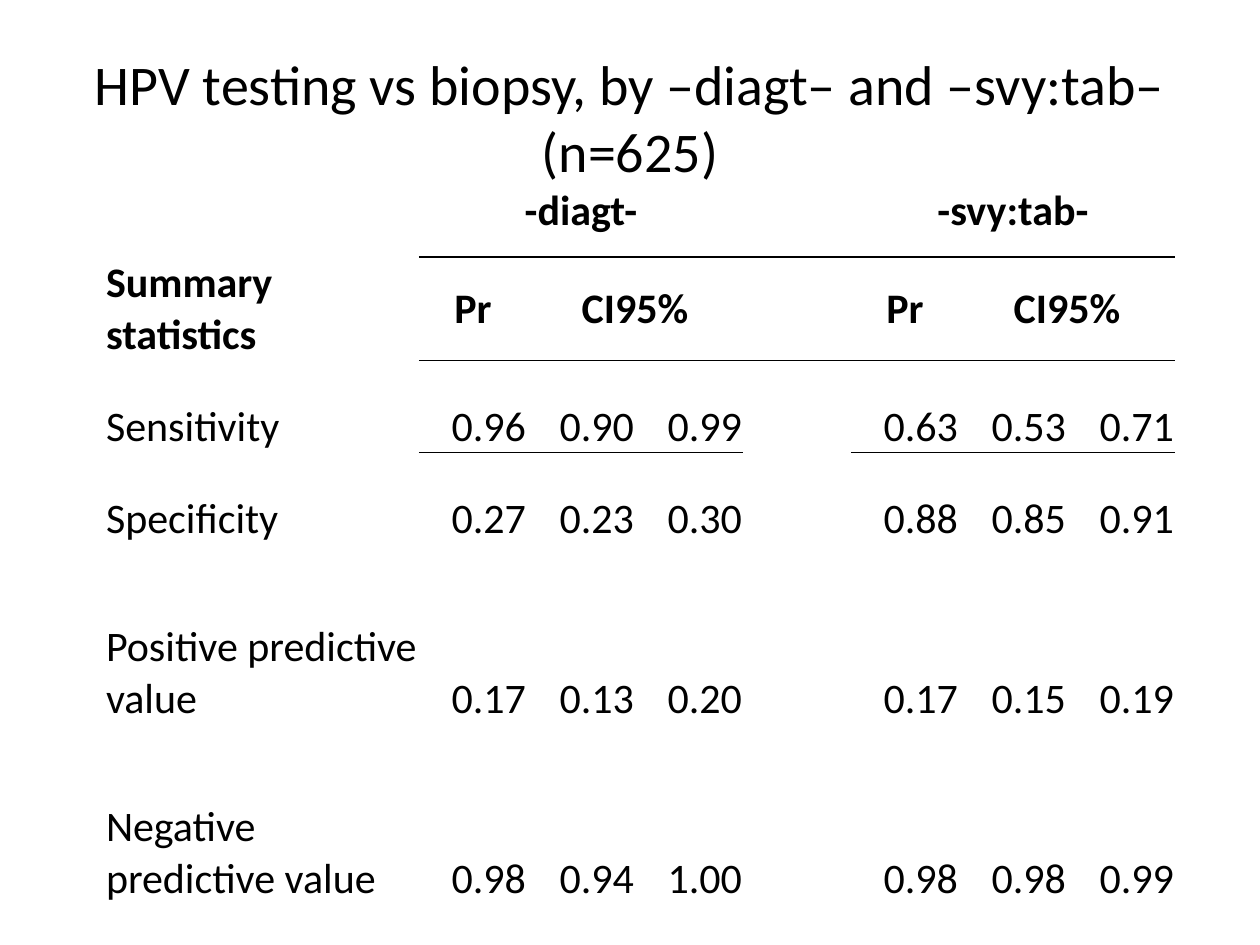
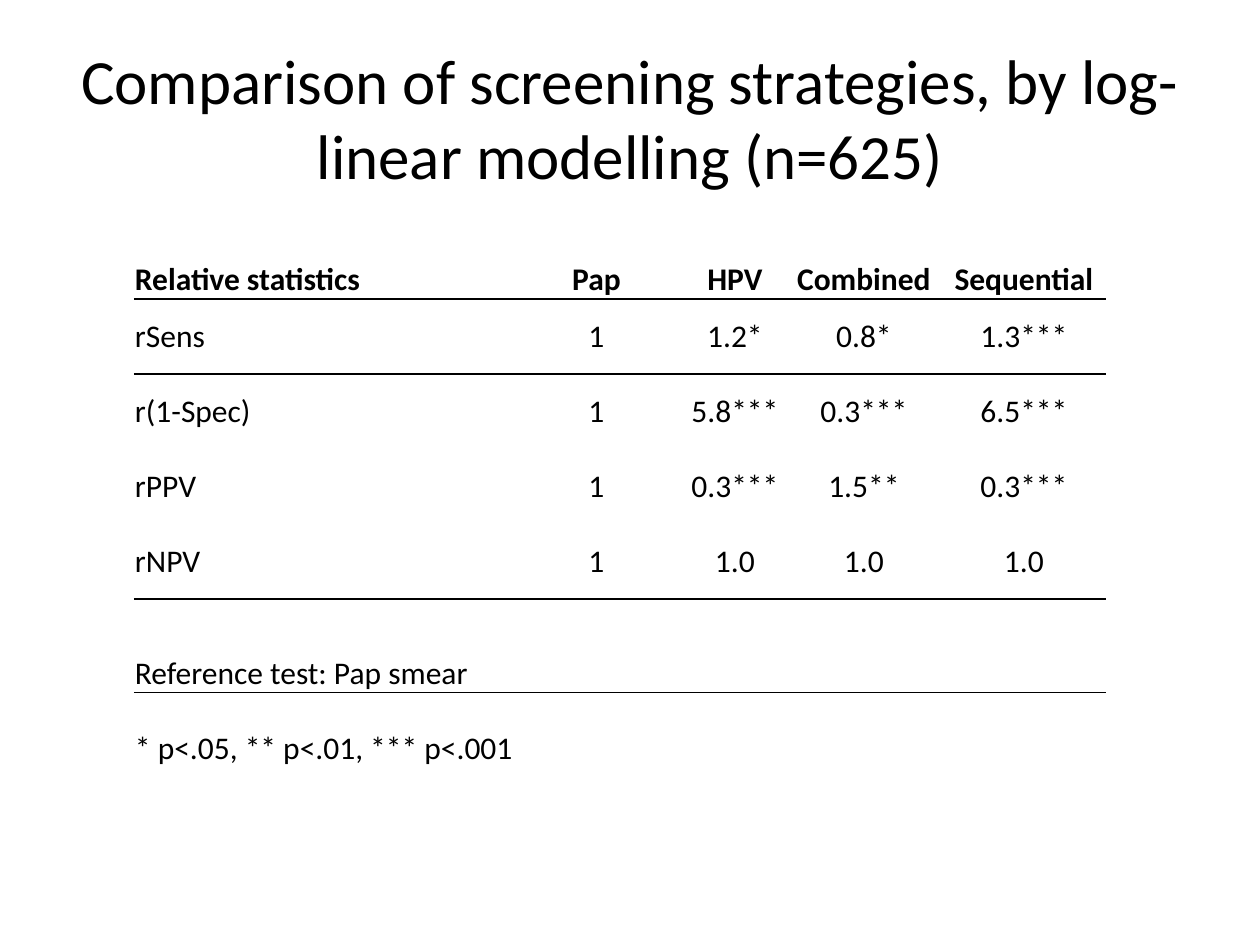
from lxml.etree import SubElement
from pptx import Presentation
from pptx.dml.color import RGBColor
from pptx.enum.text import MSO_ANCHOR, MSO_AUTO_SIZE, PP_ALIGN
from pptx.oxml.ns import qn
from pptx.util import Pt

INK = {"text": "000000", "rule": "000000"}
FONT = "Calibri"
SCALE = 914400 / 126
TITLE = (63, 38, 1134, 158)
PLAIN = "{2D5ABB26-0587-4C30-8999-92F81FD0307C}"
ANCHOR = {"m": MSO_ANCHOR.MIDDLE, "b": MSO_ANCHOR.BOTTOM}

SLIDES = [
    {
        "title": "HPV testing vs biopsy, by –diagt– and –svy:tab– (n=625)",
        "size": 32,
        "at": (105, 165),
        "cols": [314] + [108] * 7,
        "rows": [92] * 4 + [180] * 2,
        "font": 24,
        "heads": 2,
        "anchors": "mmbbbb",
        "align": PP_ALIGN.RIGHT,
        "spans": [(0, 1, 3), (0, 5, 7), (1, 2, 3), (1, 6, 7)],
        "rules": [(0, range(1, 8)), (1, (1, 2, 3, 5, 6, 7))],
        "cells": [
            ("", "-diagt-", "", "", "", "-svy:tab-", "", ""),
            ("Summary statistics", "Pr", "CI95%", "", "", "Pr", "CI95%", ""),
            ("Sensitivity", "0.96", "0.90", "0.99", "", "0.63", "0.53", "0.71"),
            ("Specificity", "0.27", "0.23", "0.30", "", "0.88", "0.85", "0.91"),
            ("Positive predictive value", "0.17", "0.13", "0.20", "", "0.17", "0.15", "0.19"),
            ("Negative predictive value", "0.98", "0.94", "1.00", "", "0.98", "0.98", "0.99"),
        ],
    },
    {
        "title": "Comparison of screening strategies, by log-linear modelling (n=625)",
        "size": 36,
        "at": (134, 224),
        "cols": [375, 175, 102, 156, 164],
        "rows": [75] * 5 + [94, 75],
        "font": 18,
        "heads": 1,
        "anchors": "bmmmmbb",
        "align": PP_ALIGN.CENTER,
        "spans": [(6, 0, 1)],
        "rules": [(0, range(5)), (4, range(5))],
        "cells": [
            ("Relative statistics", "Pap", "HPV", "Combined", "Sequential"),
            ("rSens", "1", "1.2*", "0.8*", "1.3***"),
            ("r(1-Spec)", "1", "5.8***", "0.3***", "6.5***"),
            ("rPPV", "1", "0.3***", "1.5**", "0.3***"),
            ("rNPV", "1", "1.0", "1.0", "1.0"),
            ("Reference test: Pap smear", "", "", "", ""),
            ("* p<.05, ** p<.01, *** p<.001", "", "", "", ""),
        ],
    },
]


def px(num):
    """Turn px into EMU."""
    return round(num * SCALE)


def style(par, size, align, bold=False):
    """Set the font and alignment of a paragraph."""
    par.alignment = align
    par.font.name = FONT
    par.font.size = Pt(size)
    par.font.bold = bold
    par.font.color.rgb = RGBColor.from_string(INK["text"])


def add_title(slide, data):
    """Place and fill the title."""
    title = slide.shapes.title
    title.left, title.top, title.width, title.height = map(px, TITLE)
    frame = title.text_frame
    frame.text = data["title"]
    frame.word_wrap = True
    frame.auto_size = MSO_AUTO_SIZE.NONE
    frame.vertical_anchor = MSO_ANCHOR.MIDDLE
    style(frame.paragraphs[0], data["size"], PP_ALIGN.CENTER)


def add_edge(cell, tag):
    """Draw one border of a cell."""
    props = cell._tc.get_or_add_tcPr()
    line = SubElement(props, qn(tag), w=str(Pt(1)))
    fill = SubElement(line, qn("a:solidFill"))
    SubElement(fill, qn("a:srgbClr"), val=INK["rule"])


def add_grid(slide, data):
    """Build the table with its spans, rules and text."""
    cols, rows = data["cols"], data["rows"]
    box = map(px, (*data["at"], sum(cols), sum(rows)))
    grid = slide.shapes.add_table(len(rows), len(cols), *box).table
    grid.first_row = grid.horz_banding = False
    grid._tbl.tblPr.find(qn("a:tableStyleId")).text = PLAIN
    for col, wide in zip(grid.columns, cols):
        col.width = px(wide)
    for row, high in zip(grid.rows, rows):
        row.height = px(high)
    for row, first, last in data["spans"]:
        grid.cell(row, first).merge(grid.cell(row, last))
    for row, span in data["rules"]:
        for col in span:
            add_edge(grid.cell(row, col), "a:lnB")
            add_edge(grid.cell(row + 1, col), "a:lnT")
    for r, texts in enumerate(data["cells"]):
        head = r < data["heads"]
        for c, text in enumerate(texts):
            cell = grid.cell(r, c)
            cell.fill.background()
            cell.margin_left = cell.margin_right = cell.margin_top = px(1)
            cell.margin_bottom = 0
            cell.vertical_anchor = ANCHOR[data["anchors"][r]]
            if text:
                cell.text = text
                side = PP_ALIGN.CENTER if head else data["align"]
                align = side if c else PP_ALIGN.LEFT
                style(cell.text_frame.paragraphs[0], data["font"], align, head)


def main():
    """Build and save the slides."""
    deck = Presentation()
    deck.slide_width, deck.slide_height = px(1260), px(945)
    for data in SLIDES:
        slide = deck.slides.add_slide(deck.slide_layouts[5])
        add_title(slide, data)
        add_grid(slide, data)
    deck.save("out.pptx")


if __name__ == "__main__":
    main()
